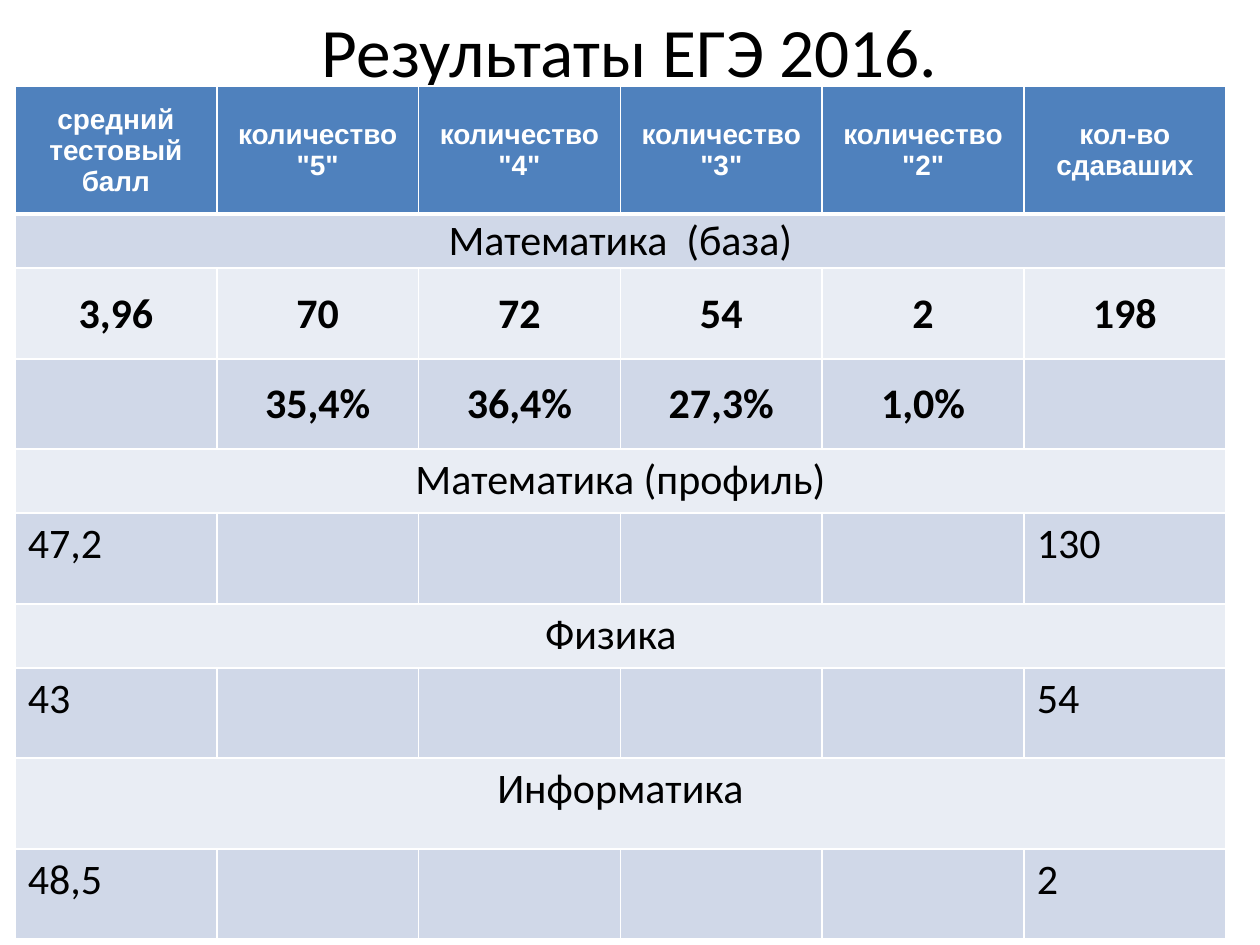
from dataclasses import dataclass

from lxml import etree
from pptx import Presentation
from pptx.dml.color import RGBColor
from pptx.enum.text import MSO_ANCHOR, MSO_AUTO_SIZE, PP_ALIGN
from pptx.oxml.ns import qn
from pptx.util import Emu, Pt

PX_PER_INCH = 126
LEFT, CENTER = PP_ALIGN.LEFT, PP_ALIGN.CENTER
TOP, MIDDLE, BOTTOM = MSO_ANCHOR.TOP, MSO_ANCHOR.MIDDLE, MSO_ANCHOR.BOTTOM
NO_AUTOFIT = MSO_AUTO_SIZE.NONE

WHITE, BLACK = "FFFFFF", "000000"
HEADER_BLUE, BAND_DARK, BAND_LIGHT = "4F81BD", "D0D8E8", "E9EDF4"
TIGHT_MARGINS = (1, 1, 1, 0)
NORMAL_MARGINS = (13, 6, 13, 6)
TABLE_LEFT, TABLE_TOP, TABLE_WIDTH = 15, 86, 1211
COLUMN_COUNT = 6


@dataclass(frozen=True)
class ResultRow:
    """A table row; a single text spans every column."""
    height: int
    texts: tuple[str, ...]
    align: PP_ALIGN = CENTER
    anchor: MSO_ANCHOR = TOP
    margins: tuple[int, int, int, int] = NORMAL_MARGINS
    bold: bool = False
    font: str = "Calibri"
    size: float = 24
    color: str = BLACK


def scores(average: str, participants: str, height: int) -> ResultRow:
    return ResultRow(height, (average, "", "", "", "", participants), align=LEFT)


ROWS = (
    ResultRow(128, ("средний тестовый балл", 'количество "5"', 'количество "4"',
                    'количество "3"', 'количество "2"', "кол-во сдаваших"),
              anchor=MIDDLE, margins=TIGHT_MARGINS, bold=True,
              font="Arial", size=16, color=WHITE),
    ResultRow(54, ("Математика  (база)",), anchor=MIDDLE, margins=TIGHT_MARGINS),
    ResultRow(91, ("3,96", "70", "72", "54", "2", "198"),
              anchor=MIDDLE, margins=TIGHT_MARGINS, bold=True),
    ResultRow(90, ("", "35,4%", "36,4%", "27,3%", "1,0%", ""),
              anchor=MIDDLE, margins=TIGHT_MARGINS, bold=True),
    ResultRow(64, ("Математика (профиль)",)),
    scores("47,2", "130", 91),
    ResultRow(64, ("Физика",), margins=(13, 6, 32, 6)),
    scores("43", "54", 90),
    ResultRow(91, ("Информатика",)),
    scores("48,5", "2", 90),
)


def px(length: float) -> Emu:
    return Emu(round(length * 914400 / PX_PER_INCH))


def rgb(color: str) -> RGBColor:
    return RGBColor.from_string(color)


def write_text(frame, text: str, *, font: str = "Calibri", size: float = 24,
               color: str = BLACK, bold: bool = False, align: PP_ALIGN = CENTER) -> None:
    paragraph = frame.paragraphs[0]
    paragraph.alignment = align
    run = paragraph.add_run()
    run.text = text
    run.font.name = font
    run.font.size = Pt(size)
    run.font.bold = bold
    run.font.color.rgb = rgb(color)


def set_margins(target, margins: tuple[int, int, int, int]) -> None:
    (target.margin_left, target.margin_top,
     target.margin_right, target.margin_bottom) = map(px, margins)


def add_borders(cell, widths: dict[str, int]) -> None:
    properties = cell._tc.get_or_add_tcPr()
    for side, width in widths.items():
        line = etree.SubElement(properties, qn(f"a:ln{side}"), w=str(Pt(width)))
        fill = etree.SubElement(line, qn("a:solidFill"))
        etree.SubElement(fill, qn("a:srgbClr"), val=WHITE)


def add_title(slide, text: str) -> None:
    box = slide.shapes.add_textbox(px(63), px(86), px(1134), px(10))
    frame = box.text_frame
    frame.word_wrap = True
    frame.auto_size = NO_AUTOFIT
    frame.vertical_anchor = BOTTOM
    set_margins(frame, (13, 0, 13, 5))
    write_text(frame, text, size=39.6)


def fill_row(table, index: int, row: ResultRow) -> None:
    table.rows[index].height = px(row.height)
    background = HEADER_BLUE if index == 0 else BAND_DARK if index % 2 else BAND_LIGHT
    borders = {"L": 1, "R": 1, "T": 3 if index == 1 else 1, "B": 3 if index == 0 else 1}
    for column in range(COLUMN_COUNT):
        cell = table.cell(index, column)
        add_borders(cell, borders)
        cell.fill.solid()
        cell.fill.fore_color.rgb = rgb(background)
    if len(row.texts) == 1:
        table.cell(index, 0).merge(table.cell(index, COLUMN_COUNT - 1))
    for column, text in enumerate(row.texts):
        if not text:
            continue
        cell = table.cell(index, column)
        cell.vertical_anchor = row.anchor
        set_margins(cell, row.margins)
        write_text(cell.text_frame, text, font=row.font, size=row.size,
                   color=row.color, bold=row.bold, align=row.align)


def add_results_table(slide) -> None:
    height = sum(row.height for row in ROWS)
    table = slide.shapes.add_table(len(ROWS), COLUMN_COUNT, px(TABLE_LEFT), px(TABLE_TOP),
                                   px(TABLE_WIDTH), px(height)).table
    for column in table.columns:
        column.width = px(TABLE_WIDTH / COLUMN_COUNT)
    for index, row in enumerate(ROWS):
        fill_row(table, index, row)


def main() -> None:
    presentation = Presentation()
    presentation.slide_width = px(1260)
    presentation.slide_height = px(945)
    slide = presentation.slides.add_slide(presentation.slide_layouts[6])
    add_title(slide, "Результаты ЕГЭ 2016.")
    add_results_table(slide)
    presentation.save("out.pptx")


if __name__ == "__main__":
    main()
